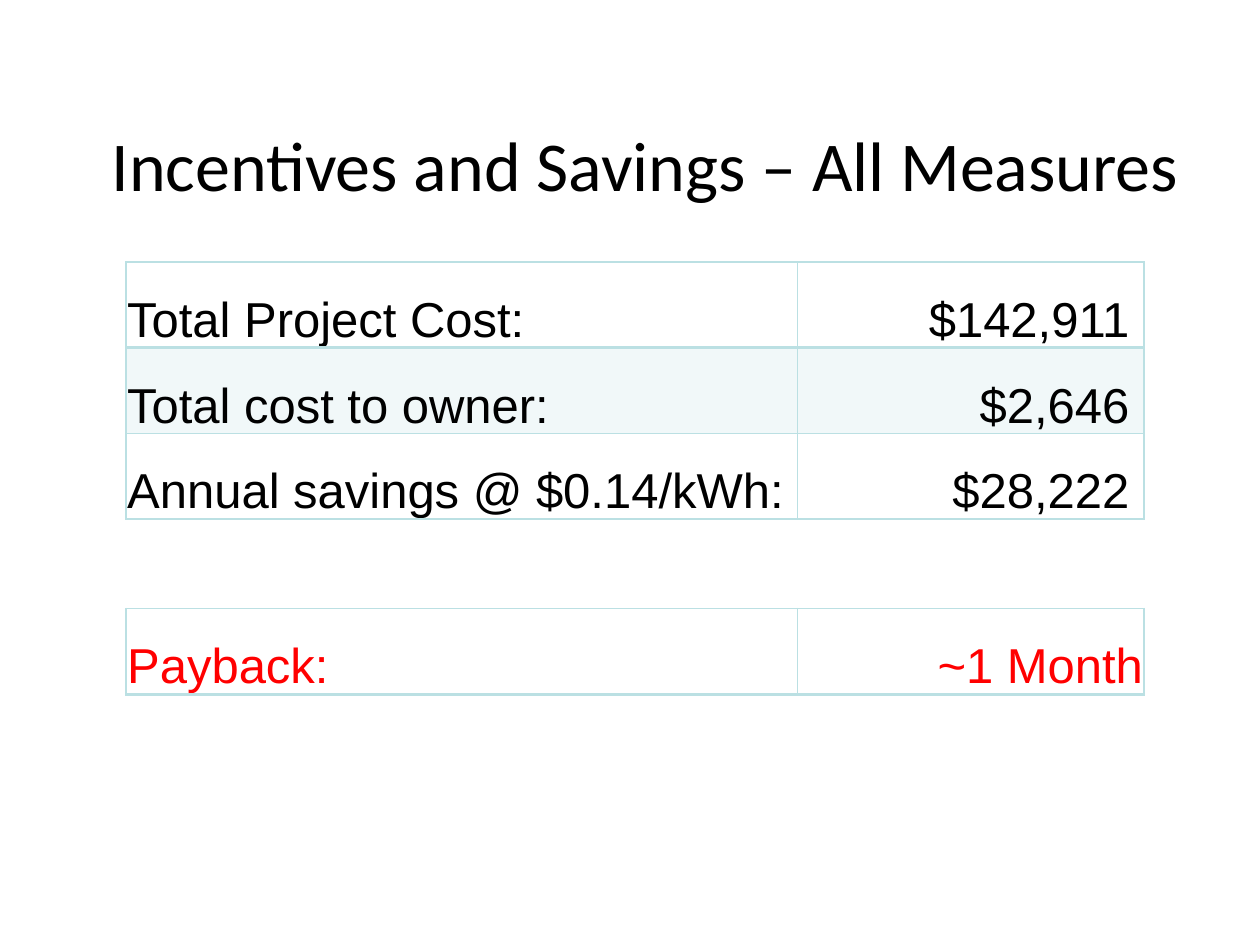
"""Build a slide that sums up project cost, savings and payback."""
from lxml import etree
from pptx import Presentation
from pptx.dml.color import RGBColor
from pptx.enum.text import MSO_ANCHOR, PP_ALIGN
from pptx.oxml.ns import qn
from pptx.util import Inches, Pt

LEFT, MID, RIGHT = PP_ALIGN.LEFT, PP_ALIGN.CENTER, PP_ALIGN.RIGHT
LOW, CENTRE = MSO_ANCHOR.BOTTOM, MSO_ANCHOR.MIDDLE
TINT, BLACK, RED = "BBE0E3", "000000", "FF0000"
COLS, ROW = (5.33, 2.75), 0.68


def write(frame, text, font="Arial", size=28, color=BLACK, align=LEFT):
    para = frame.paragraphs[0]
    para.alignment = align
    run = para.add_run()
    run.text = text
    run.font.name, run.font.size = font, Pt(size)
    run.font.color.rgb = RGBColor.from_string(color)


def edge(cell, side, width):
    line = etree.SubElement(cell._tc.get_or_add_tcPr(), qn(f"a:ln{side}"), w=str(Pt(width)))
    fill = etree.SubElement(line, qn("a:solidFill"))
    etree.SubElement(fill, qn("a:srgbClr"), val=TINT)


deck = Presentation()
deck.slide_width, deck.slide_height = Inches(10), Inches(7.5)
slide = deck.slides.add_slide(deck.slide_layouts[5])

title = slide.shapes.title
title.left, title.top = Inches(0.58), Inches(0.67)
title.width, title.height = Inches(9.08), Inches(1.25)
title.text_frame.vertical_anchor = CENTRE
write(title.text_frame, "Incentives and Savings – All Measures", font="Calibri", size=40, align=MID)

costs = [
    ("Total Project Cost:", "$142,911 "),
    ("Total cost to owner:", "$2,646 "),
    ("Annual savings @ $0.14/kWh:", "$28,222 "),
]
payback = [("Payback:", "~1 Month")]

for top, rows, color, heavy in ((2.08, costs, BLACK, (2, 1, 1)), (4.83, payback, RED, (2,))):
    frame = slide.shapes.add_table(
        len(rows), len(COLS), Inches(1), Inches(top), Inches(sum(COLS)), Inches(ROW * len(rows)))
    table = frame.table
    table.first_row = table.horz_banding = False
    for col, width in zip(table.columns, COLS):
        col.width = Inches(width)
    for r, row in enumerate(rows):
        table.rows[r].height = Inches(ROW)
        for c, text in enumerate(row):
            cell = table.cell(r, c)
            cell.margin_left = cell.margin_right = cell.margin_top = Inches(0.01)
            cell.margin_bottom = 0
            cell.vertical_anchor = LOW
            above = heavy[r - 1] if r else 1
            for side, width in (("L", 1), ("R", 1), ("T", above), ("B", heavy[r])):
                edge(cell, side, width)
            if r % 2:
                cell.fill.solid()
                cell.fill.fore_color.rgb = RGBColor.from_string(TINT)
                shade = cell._tc.tcPr.find(qn("a:solidFill"))
                etree.SubElement(shade[0], qn("a:alpha"), val="20000")
            else:
                cell.fill.background()
            write(cell.text_frame, text, color=color, align=RIGHT if c else LEFT)

deck.save("out.pptx")
